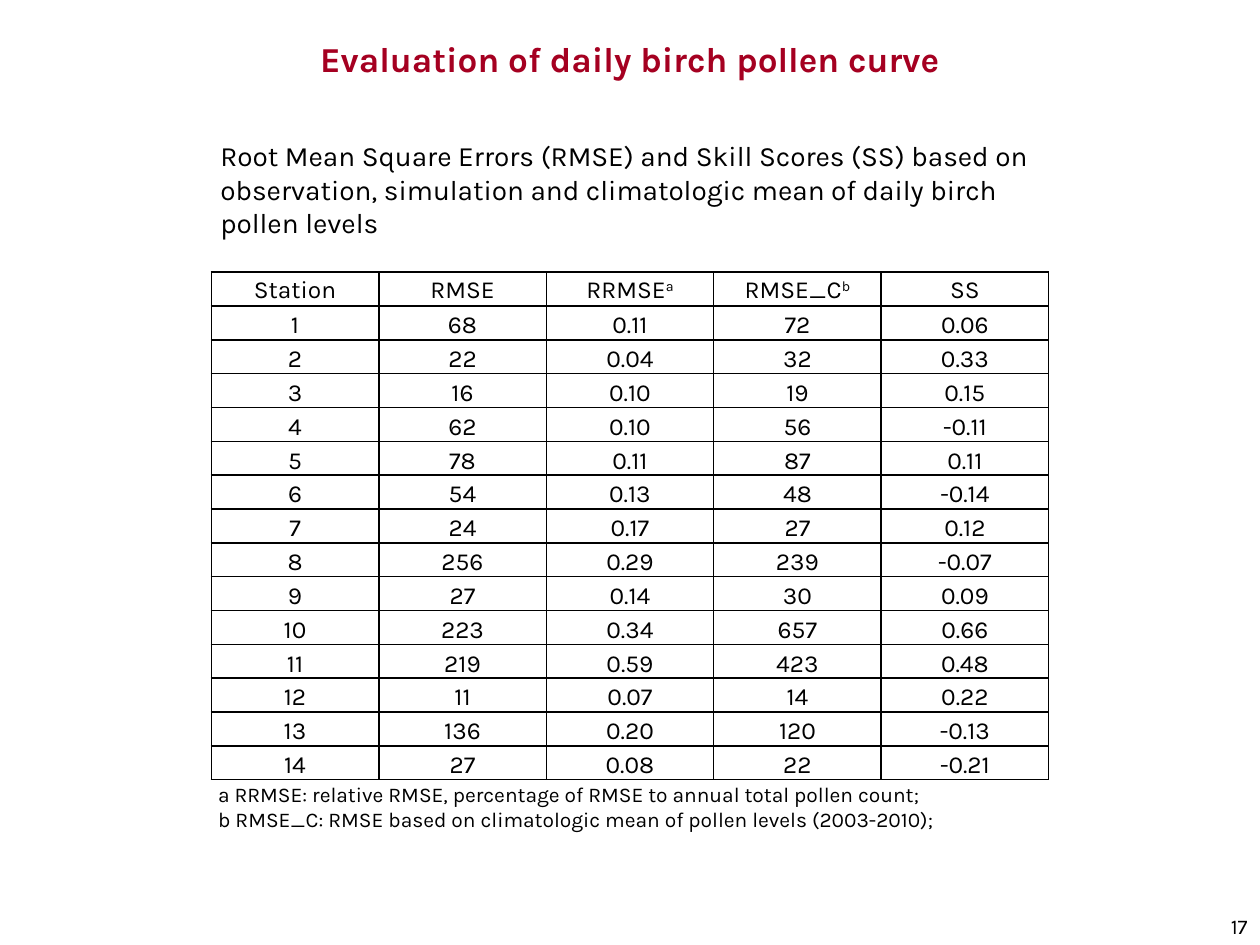
from pptx import Presentation
from pptx.dml.color import RGBColor
from pptx.enum.text import MSO_ANCHOR, MSO_AUTO_SIZE, PP_ALIGN
from pptx.oxml import parse_xml
from pptx.oxml.ns import nsdecls
from pptx.util import Pt

LEFT, CENTER, RIGHT = PP_ALIGN.LEFT, PP_ALIGN.CENTER, PP_ALIGN.RIGHT
TOP, MIDDLE, BOTTOM = MSO_ANCHOR.TOP, MSO_ANCHOR.MIDDLE, MSO_ANCHOR.BOTTOM
GROW = MSO_AUTO_SIZE.SHAPE_TO_FIT_TEXT
TITLE_ONLY = 5
COLORS = {"text": "000000", "title": "A50021", "line": "000000"}

HEAD = ["Station", "RMSE", "RRMSE^a", "RMSE_C^b", "SS"]
SCORES = [
    ("68", "0.11", "72", "0.06"),
    ("22", "0.04", "32", "0.33"),
    ("16", "0.10", "19", "0.15"),
    ("62", "0.10", "56", "-0.11"),
    ("78", "0.11", "87", "0.11"),
    ("54", "0.13", "48", "-0.14"),
    ("24", "0.17", "27", "0.12"),
    ("256", "0.29", "239", "-0.07"),
    ("27", "0.14", "30", "0.09"),
    ("223", "0.34", "657", "0.66"),
    ("219", "0.59", "423", "0.48"),
    ("11", "0.07", "14", "0.22"),
    ("136", "0.20", "120", "-0.13"),
    ("27", "0.08", "22", "-0.21"),
]
INTRO = (
    "Root Mean Square Errors (RMSE) and Skill Scores (SS) based on "
    "observation, simulation and climatologic mean of daily birch pollen levels"
)
NOTES = (
    "a RRMSE: relative RMSE, percentage of RMSE to annual total pollen count;\n"
    "b RMSE_C: RMSE based on climatologic mean of pollen levels (2003-2010);"
)


def write(frame, text, size=12, color="text", bold=False, align=LEFT,
          space=None, font="Karla"):
    for i, line in enumerate(text.split("\n")):
        para = frame.paragraphs[0] if i == 0 else frame.add_paragraph()
        para.alignment = align
        para.line_spacing = space
        for j, part in enumerate(line.split("^")):
            run = para.add_run()
            run.text = part
            run.font.name = font
            run.font.size = Pt(size)
            run.font.bold = bold
            run.font.color.rgb = RGBColor.from_string(COLORS[color])
            if j:
                run._r.get_or_add_rPr().set("baseline", "30000")


class Deck:
    def __init__(self, slide):
        self.slide = slide

    def title(self, text, x, y, w, h):
        shape = self.slide.shapes.title
        shape.left, shape.top, shape.width, shape.height = map(Pt, (x, y, w, h))
        shape.text_frame.vertical_anchor = MIDDLE
        write(shape.text_frame, text, size=20, color="title", bold=True, align=CENTER)

    def text(self, text, x, y, w, h, anchor=TOP, **style):
        frame = self.slide.shapes.add_textbox(*map(Pt, (x, y, w, h))).text_frame
        frame.word_wrap = True
        frame.auto_size = GROW
        frame.vertical_anchor = anchor
        write(frame, text, **style)

    def border(self, cell):
        props = cell._tc.get_or_add_tcPr()
        for side in "LRTB":
            props.append(parse_xml(
                f'<a:ln{side} {nsdecls("a")} w="{Pt(1)}"><a:solidFill>'
                f'<a:srgbClr val="{COLORS["line"]}"/></a:solidFill></a:ln{side}>'
            ))

    def table(self, rows, x, y, w, high):
        size = len(rows), len(rows[0])
        box = self.slide.shapes.add_table(*size, *map(Pt, (x, y, w, high * len(rows))))
        grid = box.table
        grid.first_row = grid.horz_banding = False
        for r, row in enumerate(rows):
            grid.rows[r].height = Pt(high)
            for c, text in enumerate(row):
                cell = grid.cell(r, c)
                cell.margin_left = cell.margin_right = Pt(5)
                cell.margin_top = cell.margin_bottom = 0
                cell.vertical_anchor = BOTTOM if r else TOP
                self.border(cell)
                cell.fill.background()
                write(cell.text_frame, text, size=14, align=CENTER, space=1.15)


def main():
    show = Presentation()
    show.slide_width, show.slide_height = Pt(720), Pt(540)
    deck = Deck(show.slides.add_slide(show.slide_layouts[TITLE_ONLY]))
    deck.text("17", 651, 518.4, 69, 21.6, align=RIGHT)
    deck.title("Evaluation of daily birch pollen curve", 0, 0, 720, 66.5)
    rows = [HEAD] + [(str(n), *row) for n, row in enumerate(SCORES, 1)]
    deck.table(rows, 120.75, 155.5, 478.5, 18.8)
    deck.text(INTRO, 118.8, 75.6, 481.7, 65.5, size=16)
    deck.text(NOTES, 117.5, 443, 486, 36, anchor=MIDDLE)
    show.save("out.pptx")


if __name__ == "__main__":
    main()
